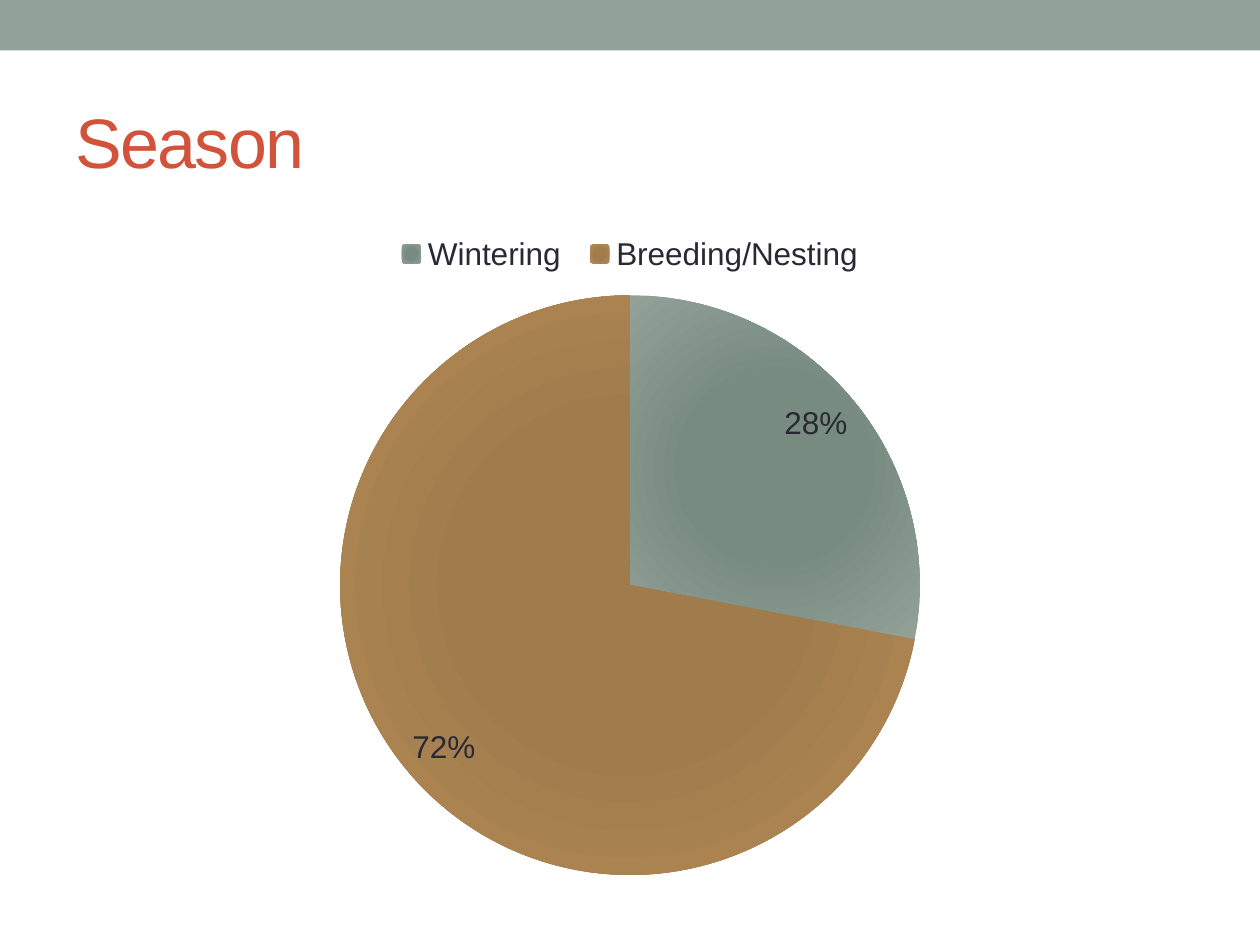
import pptx
import pptx.chart.data
import pptx.dml.color
import pptx.enum.chart
import pptx.enum.shapes
import pptx.enum.text
import pptx.oxml
import pptx.util
from pptx.util import Cm

TITLE = "Season"
SEASONS = [
    {"name": "Wintering ", "share": 28, "centre": "788B80", "edge": "93A299"},
    {"name": "Breeding/Nesting", "share": 72, "centre": "A07B4B", "edge": "B38B57"},
]
BAND_COLOUR = "93A299"
TITLE_FORMAT = {"name": "Arial", "size": pptx.util.Pt(40), "bold": False}
CHART_FORMAT = {"name": "Arial", "size": pptx.util.Pt(18), "bold": False}
LABEL_FORMAT = {
    "show_percentage": True,
    "show_value": False,
    "number_format": "0%",
    "number_format_is_linked": False,
    "position": pptx.enum.chart.XL_LABEL_POSITION.INSIDE_END,
}
LEGEND_FORMAT = {
    "position": pptx.enum.chart.XL_LEGEND_POSITION.TOP,
    "include_in_layout": False,
}
SLIDE_WIDTH, SLIDE_HEIGHT = Cm(25.4), Cm(19.05)
MARGIN = Cm(1.27)
CONTENT_WIDTH = SLIDE_WIDTH - 2 * MARGIN


def colour(value):
    return pptx.dml.color.RGBColor.from_string(value)


def apply_format(target, values):
    for name, value in values.items():
        setattr(target, name, value)


def apply_font(font, values, text_colour):
    apply_format(font, values)
    font.color.rgb = colour(text_colour)


def fill_radial(point, centre, edge):
    properties = point.format._element if hasattr(point.format, "_element") else None
    point.format.fill.solid()
    point.format.fill.fore_color.rgb = colour(edge)
    return properties


def radial_fill(centre, edge):
    stops = "".join(
        f'<a:gs pos="{position}"><a:srgbClr val="{value}"/></a:gs>'
        for position, value in ((0, centre), (40000, centre), (100000, edge))
    )
    return pptx.oxml.parse_xml(
        '<a:gradFill xmlns:a="http://schemas.openxmlformats.org/drawingml/2006/main" '
        f'rotWithShape="1"><a:gsLst>{stops}</a:gsLst><a:path path="circle">'
        '<a:fillToRect l="50000" t="50000" r="50000" b="50000"/></a:path></a:gradFill>'
    )


def add_band(slide):
    band = slide.shapes.add_shape(
        pptx.enum.shapes.MSO_SHAPE.RECTANGLE, 0, 0, SLIDE_WIDTH, Cm(1.02)
    )
    band.shadow.inherit = False
    band.fill.solid()
    band.fill.fore_color.rgb = colour(BAND_COLOUR)
    band.line.fill.background()


def add_title(slide):
    title = slide.shapes.title
    apply_format(title, {"left": MARGIN, "top": Cm(1.47), "width": CONTENT_WIDTH, "height": Cm(2.74)})
    title.text_frame.text = TITLE
    title.text_frame.vertical_anchor = pptx.enum.text.MSO_ANCHOR.MIDDLE
    paragraph = title.text_frame.paragraphs[0]
    paragraph.alignment = pptx.enum.text.PP_ALIGN.LEFT
    run = paragraph.runs[0]
    apply_font(run.font, TITLE_FORMAT, "D2533C")
    run._r.get_or_add_rPr().set("spc", "-100")


def add_season_chart(slide):
    data = pptx.chart.data.CategoryChartData()
    data.categories = [season["name"] for season in SEASONS]
    data.add_series("Series 1", [season["share"] for season in SEASONS])
    chart = slide.shapes.add_chart(
        pptx.enum.chart.XL_CHART_TYPE.PIE, MARGIN, Cm(4.45), CONTENT_WIDTH, Cm(13.54), data
    ).chart
    apply_font(chart.font, CHART_FORMAT, "292934")
    chart.has_title = False
    chart.has_legend = True
    apply_format(chart.legend, LEGEND_FORMAT)
    plot = chart.plots[0]
    plot.vary_by_categories = True
    plot.has_data_labels = True
    apply_format(plot.data_labels, LABEL_FORMAT)
    for index, season in enumerate(SEASONS):
        point_format = plot.series[0].points[index].format
        point_format.line.fill.background()
        point_format.fill.solid()
        point_format.fill.fore_color.rgb = colour(season["edge"])
    for season, properties in zip(SEASONS, chart._chartSpace.xpath(".//c:dPt/c:spPr")):
        solid_fill = properties.xpath("./a:solidFill")[0]
        properties.replace(solid_fill, radial_fill(season["centre"], season["edge"]))


def main():
    presentation = pptx.Presentation()
    apply_format(presentation, {"slide_width": SLIDE_WIDTH, "slide_height": SLIDE_HEIGHT})
    slide = presentation.slides.add_slide(presentation.slide_layouts[5])
    add_band(slide)
    add_title(slide)
    add_season_chart(slide)
    presentation.save("out.pptx")


if __name__ == "__main__":
    main()
